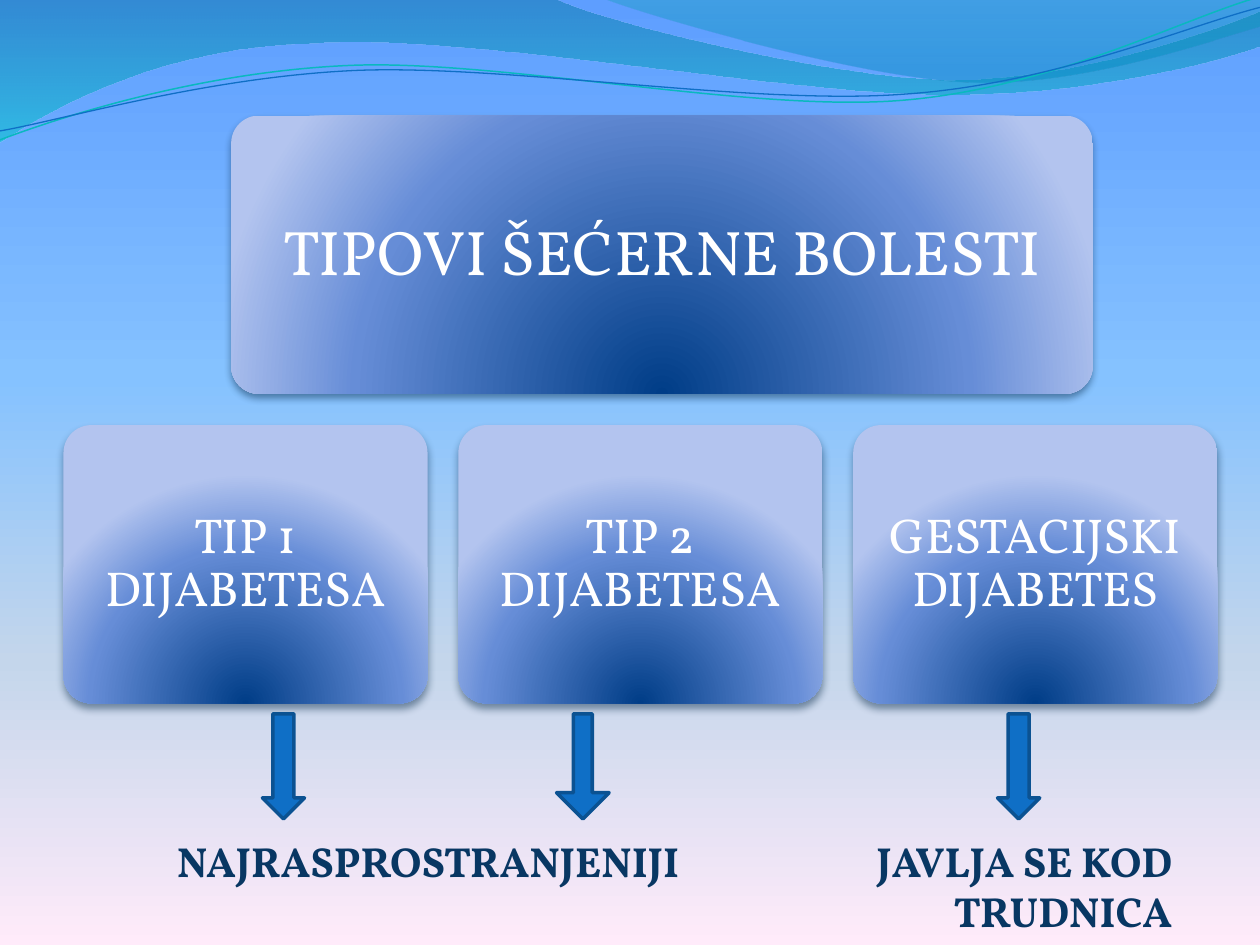
from lxml import etree
from pptx import Presentation
from pptx.dml.color import RGBColor
from pptx.enum.shapes import MSO_SHAPE as Kind
from pptx.enum.text import MSO_ANCHOR as Anchor, PP_ALIGN as Align
from pptx.oxml.ns import qn
from pptx.util import Cm, Pt

FONT = "Vollkorn"
SKY = [(0, "5E9EFF"), (40, "85C2FF"), (70, "C4D6EB"), (100, "FFEBFA")]
GLOW = [(0, "003D87"), (68, "668DD7"), (100, "B3C4EF")]

# Waves in cm: a pair is a line, six numbers are a curve
BANDS = [
    ((0, 0), [(11.18, -0.03), (12.09, 0.43, 16.87, 1.6, 19.25, 1.6),
              (21.67, 1.6, 24.33, 0.66, 25.4, 0.23), (25.43, 0.91),
              (24.97, 1.12, 22.1, 1.93, 18.95, 1.9),
              (15.8, 1.9, 9.7, 0.71, 6.53, 0.86),
              (3.28, 0.91, 1.17, 2.11, -0.03, 2.87)],
     [(0, "0074A1", 45), (100, "00C6CF", 55)]),
    ((12.17, -0.03), [(12.93, 0.28, 17.32, 1.57, 19.53, 1.65),
                      (21.74, 1.75, 24.41, 0.81, 25.4, 0.53), (25.4, 0)],
     [(0, "00A1A9", 30), (80, "008BBF", 45)]),
]
LINES = [
    ((0, 2.82), [(1.22, 2.36, 4.01, 1.45, 7.04, 1.32),
                 (10.03, 1.19, 15.06, 2.26, 18.11, 2.03),
                 (21.16, 1.8, 23.83, 0.38, 25.35, -0.05)], "0AB8BF", 0.85),
    ((0, 2.64), [(1.19, 2.44, 4.17, 1.55, 7.19, 1.42),
                 (10.24, 1.3, 15.16, 2.13, 18.21, 1.9),
                 (21.23, 1.7, 23.9, 0.53, 25.4, 0.15)], "0F6FC6", 0.75),
]


def color(text):
    return RGBColor.from_string(text)


def add(node, tag, **attrs):
    sub = etree.SubElement(node, qn(tag))
    for key, val in attrs.items():
        sub.set(key, str(val))
    return sub


def tint(node, code, alpha=100):
    clr = add(node, "a:srgbClr", val=code)
    if alpha < 100:
        add(clr, "a:alpha", val=alpha * 1000)


def blend(fill, props, stops, round_=False):
    """Swap the solid fill in props for a gradient."""
    fill.solid()
    old = props.find(qn("a:solidFill"))
    grad = etree.Element(qn("a:gradFill"), rotWithShape="1")
    rows = add(grad, "a:gsLst")
    for pos, *tone in stops:
        tint(add(rows, "a:gs", pos=pos * 1000), *tone)
    if round_:
        way = add(grad, "a:path", path="circle")
        add(way, "a:fillToRect", l=50000, t=130000, r=50000, b=-30000)
    else:
        add(grad, "a:lin", ang=5400000, scaled=0)
    props.replace(old, grad)


def wave(slide, start, steps, close):
    """Draw an outline by its end points, then bend the curved parts."""
    pen = slide.shapes.build_freeform(Cm(start[0]), Cm(start[1]))
    pen.add_line_segments([(Cm(s[-2]), Cm(s[-1])) for s in steps], close=close)
    shape = pen.convert_to_shape()
    shape.shadow.inherit = False
    sides = list(shape.element.iter(qn("a:lnTo")))
    for side, step in zip(sides, steps):
        if len(step) == 6:
            curve = etree.Element(qn("a:cubicBezTo"))
            for x, y in zip(step[::2], step[1::2]):
                add(curve, "a:pt", x=Cm(x) - shape.left, y=Cm(y) - shape.top)
            side.getparent().replace(side, curve)
    return shape


def band(slide, start, steps, stops):
    shape = wave(slide, start, steps, True)
    blend(shape.fill, shape.element.spPr, stops)
    shape.line.fill.background()


def strand(slide, start, steps, code, width):
    shape = wave(slide, start, steps, False)
    shape.fill.background()
    shape.line.color.rgb = color(code)
    shape.line.width = Pt(width)


def write(frame, text, size, code, align, bold=False):
    frame.word_wrap = True
    frame.text = text
    para = frame.paragraphs[0]
    para.alignment = align
    font = para.runs[0].font
    font.name, font.size, font.bold = FONT, Pt(size), bold
    font.color.rgb = color(code)
    return para


def card(slide, text, left, top, width, size, pad):
    shape = slide.shapes.add_shape(
        Kind.ROUNDED_RECTANGLE, Cm(left), Cm(top), Cm(width), Cm(5.61))
    shape.adjustments[0] = 0.1
    props = shape.element.spPr
    blend(shape.fill, props, GLOW, True)
    shape.line.fill.background()
    shape.shadow.inherit = False
    glow = add(props.find(qn("a:effectLst")), "a:outerShdw", blurRad=Pt(4.5),
               dist=Pt(3), dir=5400000, rotWithShape=0)
    tint(glow, "042747", 48)
    frame = shape.text_frame
    frame.vertical_anchor = Anchor.MIDDLE
    frame.margin_left = frame.margin_right = Cm(pad)
    frame.margin_top = frame.margin_bottom = Cm(pad)
    write(frame, text, size, "FFFFFF", Align.CENTER).line_spacing = 0.9


def arrow(slide, left, width, shaft):
    shape = slide.shapes.add_shape(
        Kind.DOWN_ARROW, Cm(left), Cm(14.39), Cm(width), Cm(2.12))
    shape.adjustments[0] = shaft
    shape.shadow.inherit = False
    shape.fill.solid()
    shape.fill.fore_color.rgb = color("0F6FC6")
    shape.line.color.rgb = color("0B5292")
    shape.line.width = Pt(2)


def note(slide, text, left, width, height, align, inset):
    box = slide.shapes.add_textbox(Cm(left), Cm(16.72), Cm(width), Cm(height))
    frame = box.text_frame
    frame.margin_left, frame.margin_right = map(Cm, inset)
    write(frame, text, 24, "083763", align, True)


def main():
    prs = Presentation()
    prs.slide_width, prs.slide_height = Cm(25.4), Cm(19.05)
    slide = prs.slides.add_slide(prs.slide_layouts[6])

    # Background and waves
    back = slide.background.fill
    back.solid()
    blend(back, slide.element.find(".//" + qn("p:bgPr")), SKY)
    for item in BANDS:
        band(slide, *item)
    for item in LINES:
        strand(slide, *item)

    # Title and the three types
    card(slide, "TIPOVI ŠEĆERNE BOLESTI", 4.66, 2.33, 17.37, 36, 0.38)
    types = ["TIP 1 DIJABETESA", "TIP 2 DIJABETESA", "GESTACIJSKI DIJABETES"]
    for i, text in enumerate(types):
        card(slide, text, 1.28 + 7.96 * i, 8.57, 7.34, 28, 0.3)

    # Arrows and notes
    for left, width, shaft in [(5.29, 0.85, 0.5), (11.22, 1.06, 0.36), (20.11, 0.85, 0.5)]:
        arrow(slide, left, width, shaft)
    note(slide, "NAJRASPROSTRANJENIJI", 2.34, 12.06, 1.27, Align.LEFT, (1.23, 0.25))
    note(slide, "JAVLJA SE KOD TRUDNICA", 17.35, 6.78, 2.31, Align.RIGHT, (0, 0.5))

    prs.save("out.pptx")


if __name__ == "__main__":
    main()
